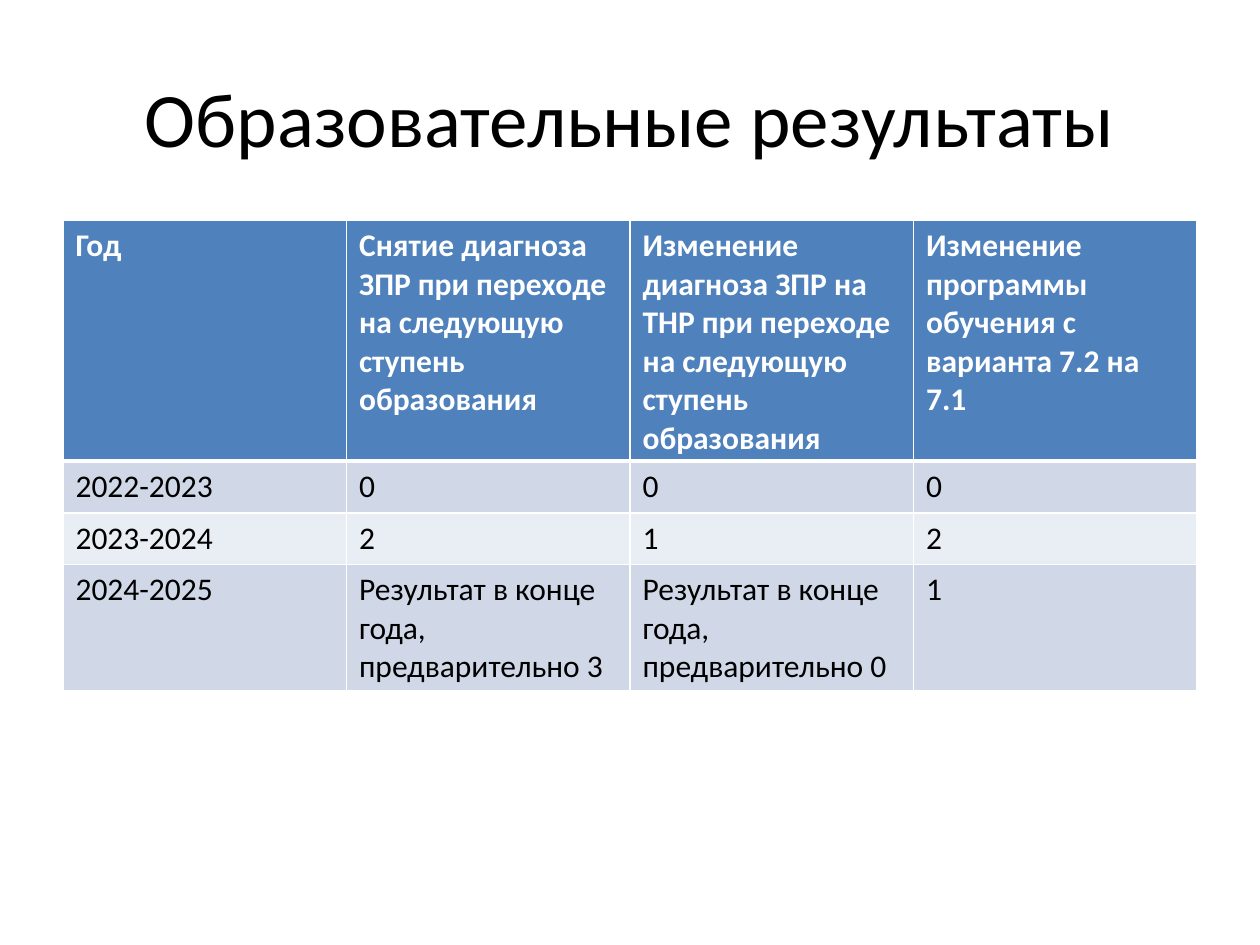
"""Build the slide with the table of educational results by year."""
from lxml.etree import SubElement
from pptx import Presentation
from pptx.dml.color import RGBColor
from pptx.enum.text import MSO_ANCHOR, PP_ALIGN
from pptx.oxml.ns import qn
from pptx.util import Inches, Pt

COLORS = {
    "header": "4F81BD",
    "odd": "D0D8E8",
    "even": "E9EDF4",
    "white": "FFFFFF",
    "black": "000000",
}
ROWS = [
    ["Год",
     "Снятие диагноза ЗПР при переходе на следующую ступень образования",
     "Изменение диагноза ЗПР на ТНР при переходе на следующую ступень образования",
     "Изменение программы обучения с варианта 7.2 на 7.1"],
    ["2022-2023", "0", "0", "0"],
    ["2023-2024", "2", "1", "2"],
    ["2024-2025",
     "Результат в конце года, предварительно 3",
     "Результат в конце года, предварительно 0",
     "1"],
]
HEIGHTS = [1.91, 0.41, 0.41, 1]


def set_text(tf, text, color, **formats):
    p = tf.paragraphs[0]
    r = p.add_run()
    r.text = text
    r.font.color.rgb = RGBColor.from_string(COLORS[color])
    for name, value in {"name": "Calibri", **formats}.items():
        setattr(r.font, name, value)
    return p


def add_border(cell, side, width):
    ln = SubElement(cell._tc.get_or_add_tcPr(), qn(f"a:ln{side}"), w=str(Pt(width)))
    fill = SubElement(ln, qn("a:solidFill"))
    SubElement(fill, qn("a:srgbClr"), val=COLORS["white"])


prs = Presentation()
prs.slide_width, prs.slide_height = Inches(10), Inches(7.5)
s = prs.slides.add_slide(prs.slide_layouts[6])

sp = s.shapes.add_textbox(Inches(0.5), Inches(0.3), Inches(9), Inches(1.25))
tf = sp.text_frame
tf.word_wrap = True
tf.vertical_anchor = MSO_ANCHOR.MIDDLE
p = set_text(tf, "Образовательные результаты", "black", size=Pt(44))
p.alignment = PP_ALIGN.CENTER

table = s.shapes.add_table(
    len(ROWS), len(ROWS[0]), Inches(0.5), Inches(1.75), Inches(9), Inches(sum(HEIGHTS))
).table
for i, (row, height) in enumerate(zip(ROWS, HEIGHTS)):
    table.rows[i].height = Inches(height)
    header = i == 0
    band = "header" if header else "odd" if i % 2 else "even"
    for j, text in enumerate(row):
        cell = table.cell(i, j)
        set_text(cell.text_frame, text, "white" if header else "black",
                 size=Pt(18), bold=header)
        widths = {"L": 1, "R": 1, "T": 3 if i == 1 else 1, "B": 3 if header else 1}
        for side, width in widths.items():
            add_border(cell, side, width)
        cell.fill.solid()
        cell.fill.fore_color.rgb = RGBColor.from_string(COLORS[band])

prs.save("out.pptx")
